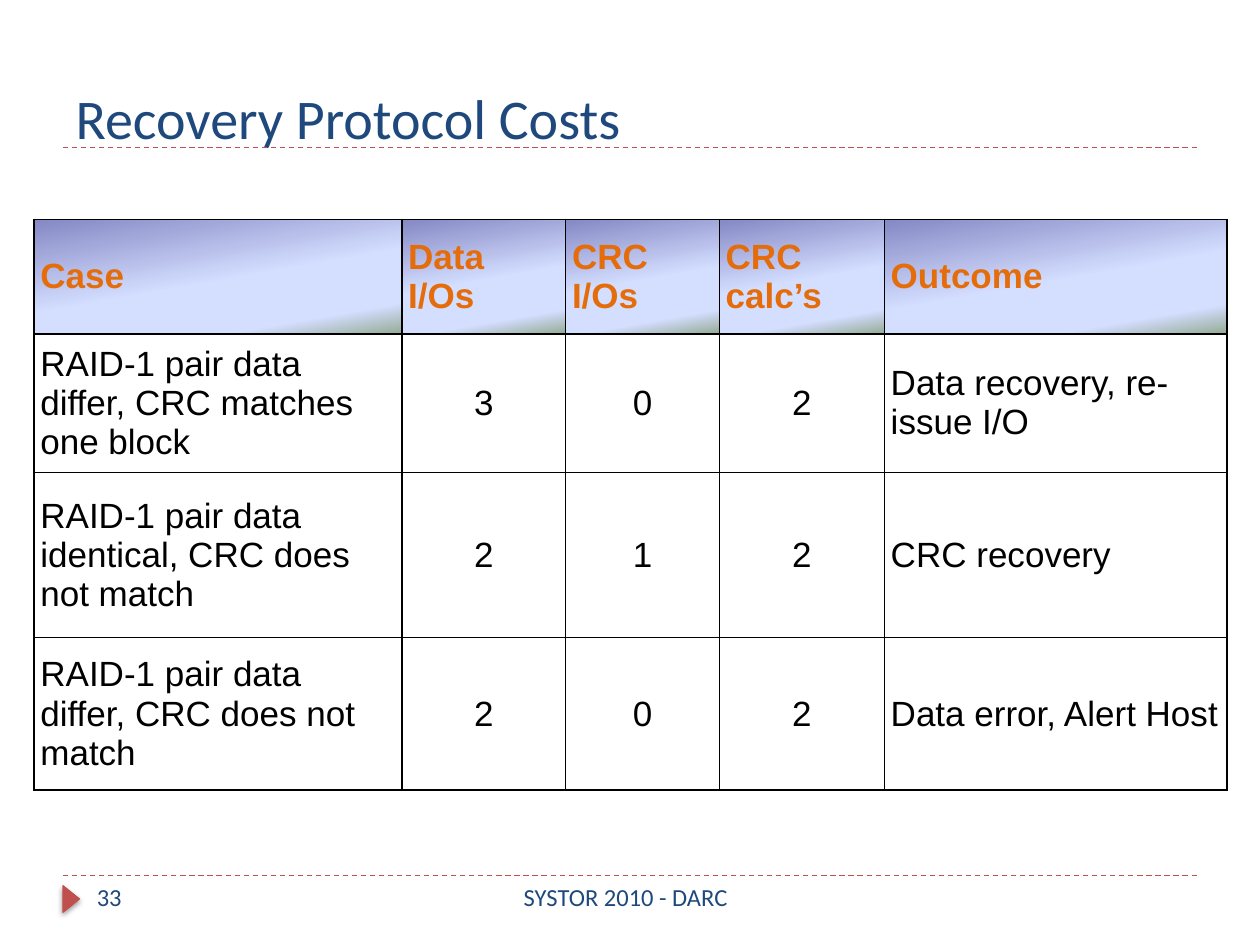
from lxml import etree
from pptx import Presentation
from pptx.dml.color import RGBColor
from pptx.enum.dml import MSO_LINE
from pptx.enum.shapes import MSO_CONNECTOR, MSO_SHAPE
from pptx.enum.text import MSO_ANCHOR as Anchor, PP_ALIGN as Align
from pptx.oxml import parse_xml
from pptx.oxml.ns import qn
from pptx.util import Inches, Pt

NS = 'xmlns:a="http://schemas.openxmlformats.org/drawingml/2006/main"'
NAVY, RED = "1F497D", "C0504D"


def style(para, face, size, hue, bold=False, align=Align.LEFT):
    para.alignment = align
    font = para.font
    font.name, font.size, font.bold = face, Pt(size), bold
    font.color.rgb = RGBColor.from_string(hue)


def shade(fill, props, stops, angle):
    fill.solid()
    marks = "".join(f'<a:gs pos="{pos * 1000}"><a:srgbClr val="{hue}"/></a:gs>'
                    for pos, hue in stops)
    grad = parse_xml(f'<a:gradFill {NS} rotWithShape="1"><a:gsLst>{marks}</a:gsLst>'
                     f'<a:lin ang="{angle * 60000}" scaled="0"/></a:gradFill>')
    props.replace(props.find(qn("a:solidFill")), grad)


deck = Presentation()
deck.slide_width, deck.slide_height = Inches(10), Inches(7.5)
slide = deck.slides.add_slide(deck.slide_layouts[5])
shapes = slide.shapes

for y in (6.95, 1.17):
    rule = shapes.add_connector(MSO_CONNECTOR.STRAIGHT, Inches(0.5), Inches(y),
                                Inches(9.5), Inches(y))
    rule.line.color.rgb = RGBColor.from_string(RED)
    rule.line.width = Pt(0.75)
    rule.line.dash_style = MSO_LINE.DASH
    etree.SubElement(rule._element.spPr, qn("a:effectLst"))

for raised in (True, False):
    mark = shapes.add_shape(MSO_SHAPE.ISOSCELES_TRIANGLE, Inches(0.46), Inches(7.07),
                            Inches(0.21), Inches(0.13))
    mark.rotation = 90
    mark.shadow.inherit = False
    if raised:
        props = mark._element.spPr
        shade(mark.fill, props, [(0, "FFA6A5"), (35, "FFC0BF"), (100, "FFE7E7")], 270)
        mark.line.color.rgb = RGBColor.from_string("BF4C48")
        mark.line.width = Pt(0.75)
        props.find(qn("a:effectLst")).append(parse_xml(
            f'<a:outerShdw {NS} blurRad="{Pt(3.1)}" dist="{Pt(1.6)}" dir="5400000" '
            'rotWithShape="0"><a:srgbClr val="000000"><a:alpha val="38000"/>'
            '</a:srgbClr></a:outerShdw>'))
    else:
        mark.fill.solid()
        mark.fill.fore_color.rgb = RGBColor.from_string(RED)
        mark.line.fill.background()

title = shapes.title
title.left, title.top, title.width, title.height = map(Inches, (0.5, 0.25, 9, 1))
title.text_frame.text = "Recovery Protocol Costs"
title.text_frame.vertical_anchor = Anchor.BOTTOM
style(title.text_frame.paragraphs[0], "Calibri", 32, NAVY)

for x, wide, text, align in ((0.67, 2.17, "33", Align.LEFT),
                             (2.92, 4.09, "SYSTOR 2010 - DARC", Align.CENTER)):
    frame = shapes.add_textbox(Inches(x), Inches(6.95), Inches(wide), Inches(0.4)).text_frame
    frame.word_wrap = True
    frame.text = text
    style(frame.paragraphs[0], "Calibri", 14, NAVY, align=align)

rows = [
    ("Case", "Data I/Os", "CRC I/Os", "CRC calc’s", "Outcome"),
    ("RAID-1 pair data differ, CRC matches one block", "3", "0", "2",
     "Data recovery, re-issue I/O"),
    ("RAID-1 pair data identical, CRC does not match", "2", "1", "2", "CRC recovery"),
    ("RAID-1 pair data differ, CRC does not match", "2", "0", "2",
     "Data error, Alert Host"),
]
widths, heights = (2.92, 1.3, 1.22, 1.31, 2.72), (0.91, 0.91, 1.31, 1.21)
band = [(0, "8488C4"), (53, "D4DEFF"), (83, "D4DEFF"), (100, "96AB94")]
grid = shapes.add_table(len(rows), len(widths), Inches(0.27), Inches(1.74),
                        Inches(sum(widths)), Inches(sum(heights))).table
for col, wide in zip(grid.columns, widths):
    col.width = Inches(wide)
for row, tall in zip(grid.rows, heights):
    row.height = Inches(tall)

for r, texts in enumerate(rows):
    for c, text in enumerate(texts):
        cell = grid.cell(r, c)
        cell.text = text
        cell.vertical_anchor = Anchor.MIDDLE
        cell.margin_left = cell.margin_right = Inches(0.05)
        cell.margin_top = cell.margin_bottom = Inches(0.05)
        props = cell._tc.get_or_add_tcPr()
        para = cell.text_frame.paragraphs[0]
        if r == 0:
            shade(cell.fill, props, band, 80)
            style(para, "Arial", 20, "E46C0A", bold=True)
        else:
            cell.fill.background()
            style(para, "Arial", 20, "000000",
                  align=Align.CENTER if 0 < c < 4 else Align.LEFT)
        for i, side in enumerate("LRTB"):
            props.insert(i, parse_xml(
                f'<a:ln{side} {NS} w="{Pt(1)}"><a:solidFill><a:srgbClr val="000000"/>'
                f'</a:solidFill></a:ln{side}>'))

deck.save("out.pptx")
